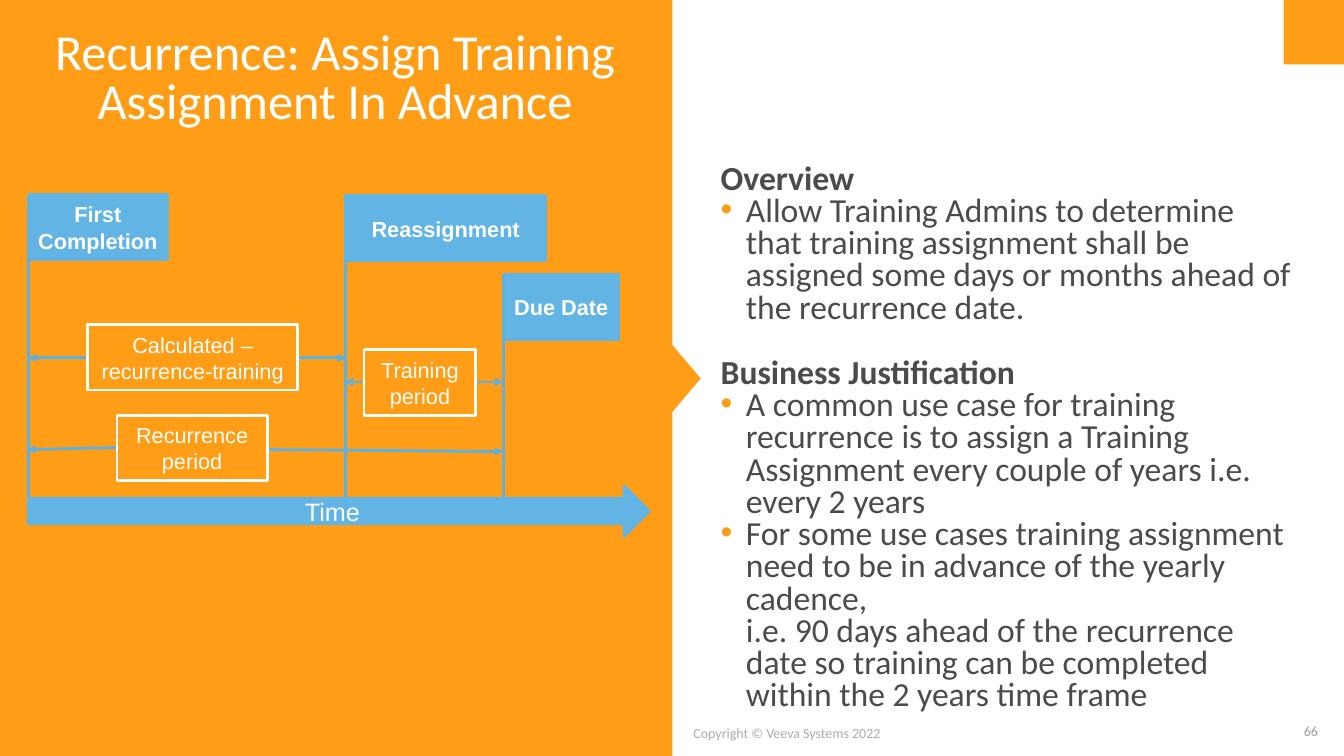
"""Build the slide on assigning recurring training in advance."""
from dataclasses import dataclass

import lxml.etree
import pptx
import pptx.dml.color
import pptx.enum.shapes
import pptx.enum.text
import pptx.oxml
import pptx.oxml.ns
import pptx.util

Inches = pptx.util.Inches
Pt = pptx.util.Pt
Shape = pptx.enum.shapes.MSO_SHAPE
Align = pptx.enum.text.PP_ALIGN
Anchor = pptx.enum.text.MSO_ANCHOR

COLORS = {
    "orange": "FF9E16",
    "white": "FFFFFF",
    "blue": "61B4E4",
    "line": "5CB1E2",
    "body": "4A4B4E",
    "number": "9D9EA0",
    "copyright": "AEABAB",
}


@dataclass
class Block:
    """A plain or labelled shape."""
    left: float
    top: float
    width: float
    height: float
    fill: str | None = "blue"
    line: str | None = "blue"
    text: str = ""
    size: float = 15.5
    bold: bool = False
    kind: int = Shape.RECTANGLE
    rotation: float = 0


@dataclass
class Link:
    """A straight line, with or without an arrowhead at its end."""
    x1: float
    y1: float
    x2: float
    y2: float
    arrow: bool = True


@dataclass
class Entry:
    """A paragraph of the body text."""
    text: str
    heading: bool = False
    before: float = 0


@dataclass
class Note:
    """A small line of text at the foot of the slide."""
    text: str
    left: float
    top: float
    width: float
    color: str
    align: int


PANELS = [
    Block(6.67, 0, 6.67, 7.5, "white", None),
    Block(6.43, 3.6, 0.73, 0.31, "orange", None, kind=Shape.ISOSCELES_TRIANGLE, rotation=90),
    Block(12.73, 0, 0.61, 0.64, "orange", None),
]
MILESTONES = [
    Block(0.28, 1.93, 1.38, 0.65, text="First Completion", bold=True),
    Block(3.43, 1.94, 1.98, 0.65, text="Reassignment", bold=True),
    Block(4.99, 2.72, 1.15, 0.65, text="Due Date", bold=True),
]
LINKS = [
    Link(0.28, 2.57, 0.28, 4.93, False),
    Link(3.43, 2.59, 3.43, 4.96, False),
    Link(4.99, 2.72, 4.99, 4.98, False),
    Link(0.87, 3.55, 0.28, 3.55),
    Link(2.95, 3.55, 3.43, 3.55),
    Link(3.61, 3.79, 3.42, 3.79),
    Link(4.72, 3.79, 4.99, 3.79),
    Link(1.16, 4.44, 0.27, 4.46),
    Link(2.67, 4.46, 4.99, 4.48),
]
PERIODS = [
    Block(0.87, 3.22, 2.08, 0.65, None, "white", "Calculated – recurrence-training"),
    Block(3.61, 3.47, 1.11, 0.65, None, "white", "Training period"),
    Block(1.16, 4.12, 1.49, 0.65, None, "white", "Recurrence period"),
]
TIMELINE = Block(0.28, 4.82, 6.16, 0.5, text="Time", size=18, kind=Shape.RIGHT_ARROW)
ENTRIES = [
    Entry("Overview", heading=True),
    Entry("Allow Training Admins to determine that training assignment shall be "
          "assigned some days or months ahead of the recurrence date."),
    Entry("Business Justification", heading=True, before=23.5),
    Entry("A common use case for training recurrence is to assign a Training "
          "Assignment every couple of years i.e. every 2 years"),
    Entry("For some use cases training assignment need to be in advance of the "
          "yearly cadence,\vi.e. 90 days ahead of the recurrence date so training "
          "can be completed within the 2 years time frame"),
]
NOTES = [
    Note("66", 12.05, 7.12, 1.12, "number", Align.RIGHT),
    Note("Copyright © Veeva Systems 2022", 5.94, 7.14, 3.73, "copyright", Align.CENTER),
]


def rgb(name: str) -> pptx.dml.color.RGBColor:
    """Return the named colour."""
    return pptx.dml.color.RGBColor.from_string(COLORS[name])


def format_runs(para, size: float, color: str, face: str = "Calibri", bold: bool = False) -> None:
    """Format every run of a paragraph."""
    for span in para.runs:
        span.font.name = face
        span.font.size = Pt(size)
        span.font.bold = bold
        span.font.color.rgb = rgb(color)


def add_block(page, block: Block) -> None:
    """Draw one block and its label."""
    box = page.shapes.add_shape(block.kind, Inches(block.left), Inches(block.top),
                                Inches(block.width), Inches(block.height))
    box.shadow.inherit = False
    box.rotation = block.rotation
    if block.fill:
        box.fill.solid()
        box.fill.fore_color.rgb = rgb(block.fill)
    else:
        box.fill.background()
    if block.line:
        box.line.color.rgb = rgb(block.line)
        box.line.width = Pt(2)
    else:
        box.line.fill.background()
    if block.text:
        frame = box.text_frame
        frame.text = block.text
        frame.vertical_anchor = Anchor.MIDDLE
        frame.margin_left = frame.margin_right = Inches(0.05)
        para = frame.paragraphs[0]
        para.alignment = Align.CENTER
        format_runs(para, block.size, "white", "Arial", block.bold)


def add_link(page, link: Link) -> None:
    """Draw one line of the timeline."""
    connector = page.shapes.add_connector(
        pptx.enum.shapes.MSO_CONNECTOR.STRAIGHT, Inches(link.x1), Inches(link.y1),
        Inches(link.x2), Inches(link.y2))
    connector.line.color.rgb = rgb("line")
    connector.line.width = Pt(2)
    if link.arrow:
        outline = connector.line._get_or_add_ln()
        lxml.etree.SubElement(outline, pptx.oxml.ns.qn("a:tailEnd"), type="triangle")
    lxml.etree.SubElement(connector._element.spPr, pptx.oxml.ns.qn("a:effectLst"))


def add_bullet(para) -> None:
    """Give a paragraph a hanging orange bullet."""
    props = para._p.get_or_add_pPr()
    props.set("marL", str(Inches(0.25)))
    props.set("indent", str(-Inches(0.25)))
    tint = lxml.etree.SubElement(props, pptx.oxml.ns.qn("a:buClr"))
    lxml.etree.SubElement(tint, pptx.oxml.ns.qn("a:srgbClr"), val=COLORS["orange"])
    lxml.etree.SubElement(props, pptx.oxml.ns.qn("a:buFont"), typeface="Arial")
    lxml.etree.SubElement(props, pptx.oxml.ns.qn("a:buChar"), char="•")


def add_body(page, entries: list[Entry]) -> None:
    """Write the headings and bullets on the right."""
    box = page.shapes.add_textbox(Inches(7.05), Inches(1.58), Inches(5.86), Inches(5.59))
    frame = box.text_frame
    frame.word_wrap = True
    for index, entry in enumerate(entries):
        para = frame.add_paragraph() if index else frame.paragraphs[0]
        para.text = entry.text
        para.line_spacing = 0.8
        if entry.before:
            para.space_before = Pt(entry.before)
        if not entry.heading:
            add_bullet(para)
        format_runs(para, 24, "body", bold=entry.heading)


def add_note(page, note: Note) -> None:
    """Write one footer text."""
    box = page.shapes.add_textbox(Inches(note.left), Inches(note.top),
                                  Inches(note.width), Inches(0.27))
    box.text_frame.word_wrap = True
    box.text_frame.text = note.text
    para = box.text_frame.paragraphs[0]
    para.alignment = note.align
    format_runs(para, 10, note.color)


def set_title(page, text: str) -> None:
    """Place and format the title."""
    title = page.shapes.title
    title.left, title.top = Inches(0), Inches(0.27)
    title.width, title.height = Inches(6.65), Inches(1.08)
    frame = title.text_frame
    frame.text = text
    frame.word_wrap = True
    frame.auto_size = pptx.enum.text.MSO_AUTO_SIZE.NONE
    frame.vertical_anchor = Anchor.TOP
    para = frame.paragraphs[0]
    para.alignment = Align.CENTER
    para.line_spacing = 0.8
    format_runs(para, 36, "white")


def main() -> None:
    """Build and save the deck."""
    deck = pptx.Presentation()
    deck.slide_width, deck.slide_height = Inches(13.33), Inches(7.5)
    page = deck.slides.add_slide(deck.slide_layouts[5])
    page.background.fill.solid()
    page.background.fill.fore_color.rgb = rgb("orange")
    set_title(page, "Recurrence: Assign Training Assignment In Advance")
    for block in PANELS + MILESTONES:
        add_block(page, block)
    for link in LINKS:
        add_link(page, link)
    for block in PERIODS + [TIMELINE]:
        add_block(page, block)
    add_body(page, ENTRIES)
    for note in NOTES:
        add_note(page, note)
    deck.save("out.pptx")


if __name__ == "__main__":
    main()
